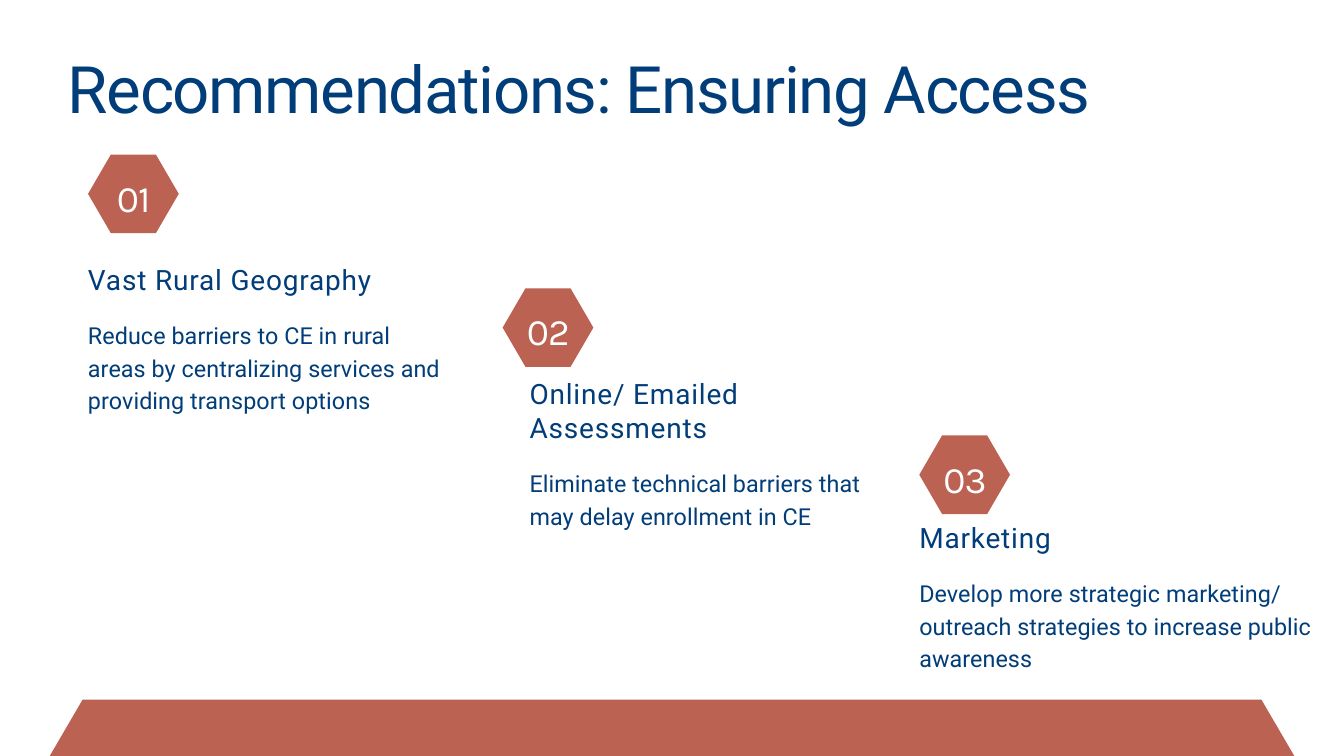
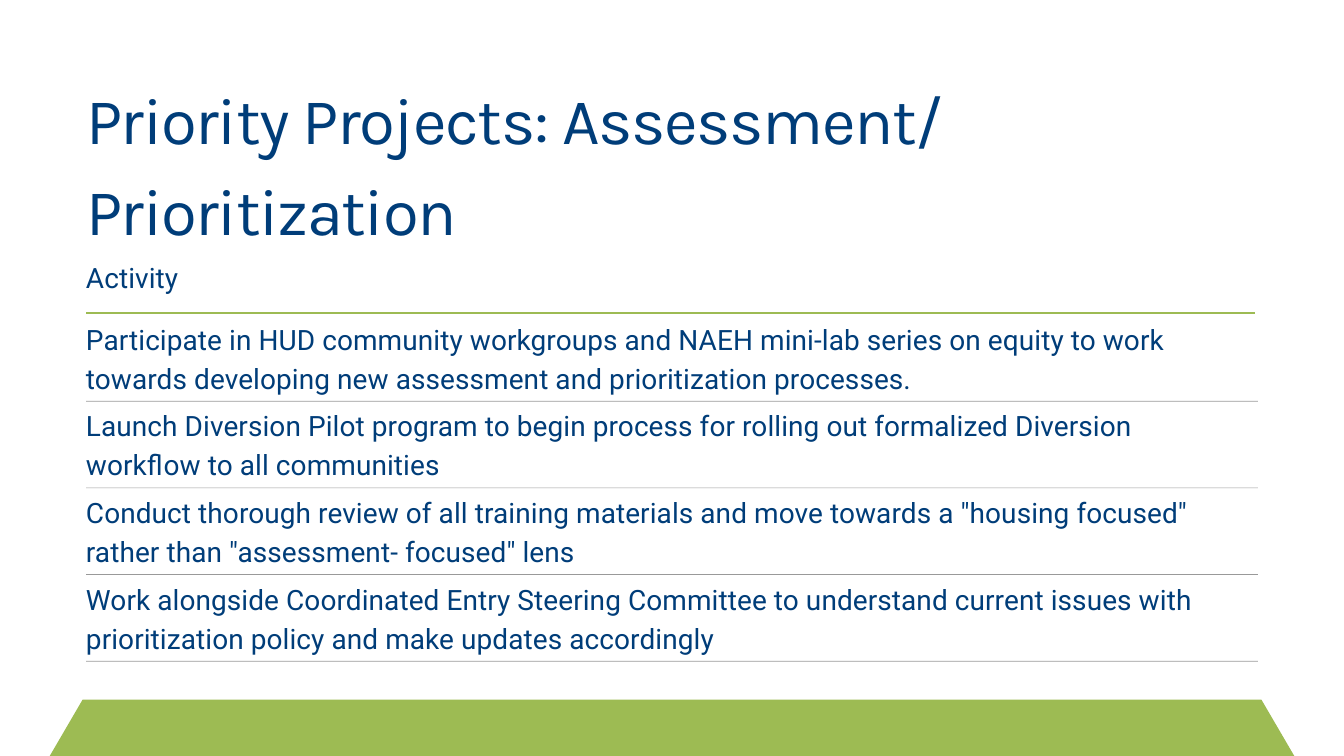
from dataclasses import dataclass

from lxml import etree
from pptx import Presentation
from pptx import util as u
from pptx.dml.color import RGBColor
from pptx.enum import shapes, text
from pptx.oxml.ns import qn
from pptx.shapes.connector import Connector

Inches, Pt = u.Inches, u.Pt


@dataclass(frozen=True)
class TextStyle:
    font: str
    size: float
    leading: float
    tracking: float
    color: str
    align: text.PP_ALIGN = text.PP_ALIGN.LEFT


NAVY, WHITE = "003D79", "FFFFFF"


@dataclass(frozen=True)
class Theme:
    background: str = WHITE
    clay: str = "BB6253"
    green: str = "9DBB53"
    rule: str = "000000"
    rule_opacity: int = 40
    title: TextStyle = TextStyle("Roboto", 70, 98, -1.4, NAVY)
    title_alt: TextStyle = TextStyle("Karla", 70, 98, -1.4, NAVY)
    heading: TextStyle = TextStyle("Roboto", 30, 36, 0.9, NAVY)
    body: TextStyle = TextStyle("Roboto", 25, 35, 0.1, NAVY)
    activity: TextStyle = TextStyle("Roboto", 30, 42, 0.1, NAVY)
    badge: TextStyle = TextStyle("Karla", 40, 56, -0.8, WHITE, text.PP_ALIGN.CENTER)


THEME = Theme()


@dataclass(frozen=True)
class Step:
    heading: str
    body: str
    badge_left: float
    badge_top: float
    text_left: float
    heading_top: float
    width: float
    heading_lines: int
    body_lines: int


STEPS = [
    Step("Vast Rural Geography",
         "Reduce barriers to CE in rural areas by centralizing services and "
         "providing transport options",
         1.31, 2.3, 1.31, 3.91, 5.3, 1, 3),
    Step("Online/ Emailed Assessments",
         "Eliminate technical barriers that may delay enrollment in CE",
         7.48, 4.29, 7.88, 5.61, 5.39, 2, 2),
    Step("Marketing",
         "Develop more strategic marketing/ outreach strategies to increase "
         "public awareness",
         13.68, 6.48, 13.68, 7.75, 6.35, 1, 3),
]

ACTIVITIES = [
    "Participate in HUD community workgroups and NAEH mini-lab series on equity "
    "to work towards developing new assessment and prioritization processes.",
    "Launch Diversion Pilot program to begin process for rolling out formalized "
    "Diversion workflow to all communities",
    'Conduct thorough review of all training materials and move towards a '
    '"housing focused" rather than "assessment- focused" lens',
    "Work alongside Coordinated Entry Steering Committee to understand current "
    "issues with prioritization policy and make updates accordingly",
]


def add_text(parent, words: str, left: float, top: float, width: float,
             height: float, style: TextStyle) -> None:
    sp = parent.shapes.add_textbox(Inches(left), Inches(top), Inches(width), Inches(height))
    tf = sp.text_frame
    tf.word_wrap = True
    tf.auto_size = text.MSO_AUTO_SIZE.SHAPE_TO_FIT_TEXT
    tf.margin_left = tf.margin_top = tf.margin_right = tf.margin_bottom = 0
    tf.text = words
    p = tf.paragraphs[0]
    p.alignment = style.align
    p.line_spacing = Pt(style.leading)
    r = p.runs[0]
    r.font.name = style.font
    r.font.size = Pt(style.size)
    r.font.color.rgb = RGBColor.from_string(style.color)
    r.font._element.set("spc", str(round(style.tracking * 100)))


def add_hexagon(parent, left: float, top: float, width: float, height: float,
                inset: float, color: str) -> None:
    """Draw a flat-topped hexagon whose side points reach `inset` beyond its top edge."""
    right, middle, bottom = left + width, top + height / 2, top + height
    points = [(left + inset, top), (right - inset, top), (right, middle),
              (right - inset, bottom), (left + inset, bottom), (left, middle)]
    corners = [(Inches(x), Inches(y)) for x, y in points]
    builder = parent.shapes.build_freeform(*corners[0])
    builder.add_line_segments(corners[1:], close=True)
    sp = builder.convert_to_shape()
    sp.shadow.inherit = False
    sp.fill.solid()
    sp.fill.fore_color.rgb = RGBColor.from_string(color)
    sp.line.fill.background()


def add_rule(s, top: float, right: float, color: str, weight: float) -> Connector:
    rule = s.shapes.add_connector(shapes.MSO_CONNECTOR.STRAIGHT, Inches(1.28),
                                  Inches(top), Inches(right), Inches(top))
    rule.line.color.rgb = RGBColor.from_string(color)
    rule.line.width = Pt(weight)
    etree.SubElement(rule._element.spPr, qn("a:effectLst"))
    return rule


def set_opacity(rule: Connector, percent: int) -> None:
    color = rule._element.spPr.find(".//" + qn("a:srgbClr"))
    etree.SubElement(color, qn("a:alpha")).set("val", str(percent * 1000))


def add_slide(prs, band_color: str):
    """Add a blank slide with the band that rises from its bottom edge."""
    s = prs.slides.add_slide(prs.slide_layouts[6])
    s.background.fill.solid()
    s.background.fill.fore_color.rgb = RGBColor.from_string(THEME.background)
    add_hexagon(s, 0.74, 10.41, 18.52, 1.68, 0.49, band_color)
    return s


def add_step(s, number: int, step: Step) -> None:
    copy = s.shapes.add_group_shape()
    heading_height = step.heading_lines * THEME.heading.leading / 72
    body_top = step.heading_top + heading_height + 0.3
    add_text(copy, step.heading, step.text_left, step.heading_top, step.width,
             heading_height, THEME.heading)
    add_text(copy, step.body, step.text_left, body_top, step.width,
             step.body_lines * THEME.body.leading / 72, THEME.body)

    badge = s.shapes.add_group_shape()
    add_hexagon(badge, step.badge_left, step.badge_top, 1.35, 1.17, 0.34, THEME.clay)
    add_text(badge, f"{number:02d}", step.badge_left + 0.3, step.badge_top + 0.19,
             0.76, 0.72, THEME.badge)


def build_recommendations(prs) -> None:
    s = add_slide(prs, THEME.clay)
    add_text(s, "Recommendations: Ensuring Access", 1.01, 0.52, 15.85, 1.32, THEME.title)
    for number, step in enumerate(STEPS, start=1):
        add_step(s, number, step)


def build_priority_projects(prs) -> None:
    s = add_slide(prs, THEME.green)
    add_text(s, "Priority Projects: Assessment/ Prioritization",
             1.28, 0.98, 17.88, 2.66, THEME.title_alt)
    add_text(s, "Activity", 1.28, 3.79, 3.5, 0.58, THEME.activity)
    add_rule(s, 4.66, 18.68, THEME.green, 2.25)
    row_pitch = 1.29
    for row, activity in enumerate(ACTIVITIES):
        offset = row * row_pitch
        add_text(s, activity, 1.28, 4.71 + offset, 17.4, 1.17, THEME.activity)
        rule = add_rule(s, 5.97 + offset, 18.72, THEME.rule, 0.75)
        set_opacity(rule, THEME.rule_opacity)


def main() -> None:
    prs = Presentation()
    prs.slide_width, prs.slide_height = Inches(20), Inches(11.25)
    build_recommendations(prs)
    build_priority_projects(prs)
    prs.save("out.pptx")


if __name__ == "__main__":
    main()
